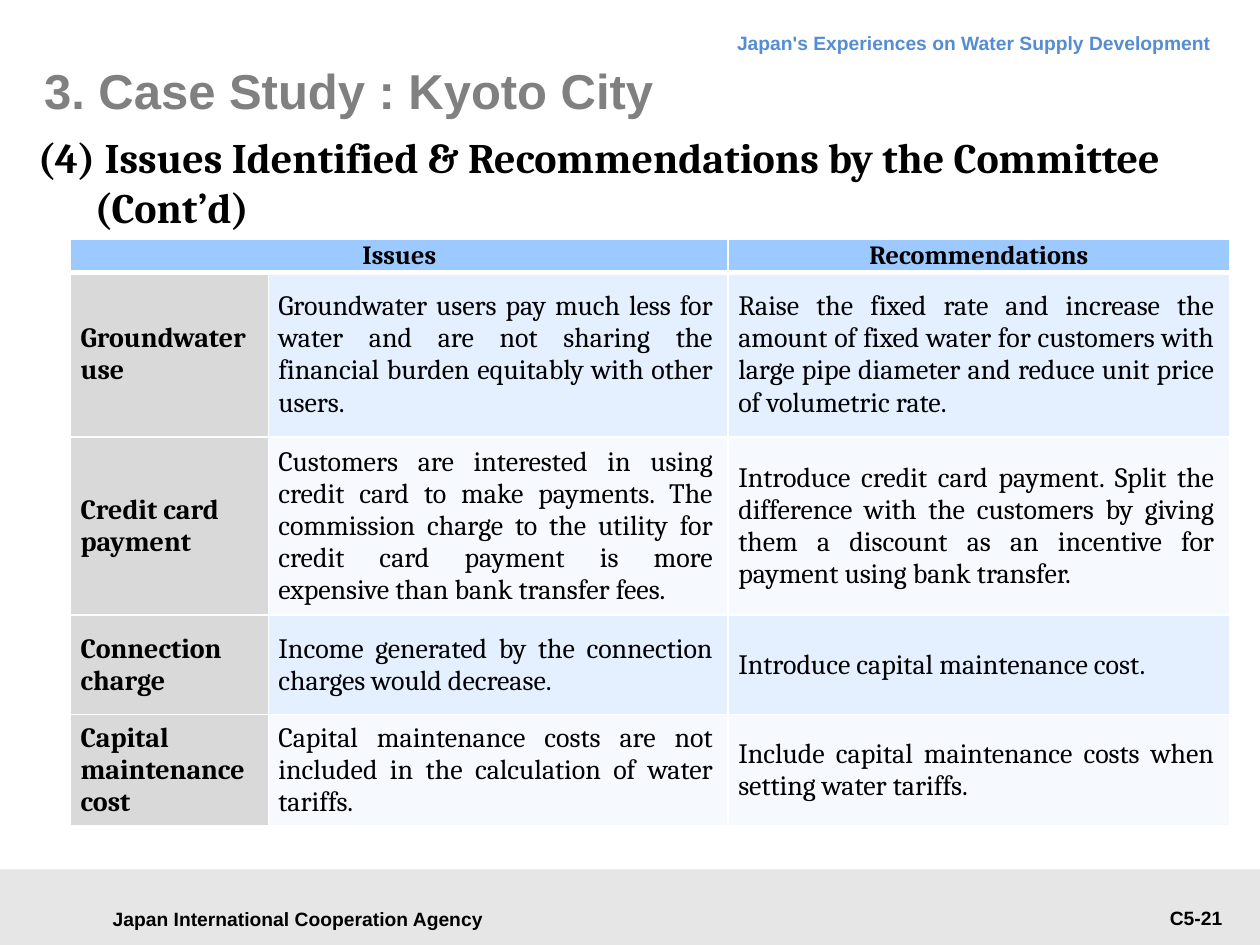
from dataclasses import dataclass

from lxml import etree
from pptx import Presentation
from pptx.dml.color import RGBColor
from pptx.enum import shapes, text
from pptx.oxml import ns
from pptx.util import Inches, Pt

ALIGN = text.PP_ALIGN


@dataclass(frozen=True)
class Theme:
    sans: str = "Arial"
    serif: str = "Cambria"
    ink: str = "000000"
    title: str = "808080"
    banner: str = "548DD4"
    footer: str = "E6E6E6"
    header: str = "9CC9FF"
    label: str = "D9D9D9"
    bands: tuple = ("CAE2FF", "EFF6FF")
    border: str = "FFFFFF"
    title_size: int = 28
    heading_size: int = 24
    cell_size: int = 16
    header_size: int = 15
    small_size: int = 11


T = Theme()

COLS = (1.57, 3.65, 3.98)
ROWS = (0.26, 1.31, 1.41, 0.79, 0.87)
ISSUES = (
    ("Groundwater use",
     "Groundwater users pay much less for water and are not sharing the "
     "financial burden equitably with other users.",
     "Raise the fixed rate and increase the amount of fixed water for customers "
     "with large pipe diameter and reduce unit price of volumetric rate."),
    ("Credit card payment",
     "Customers are interested in using credit card to make payments. The "
     "commission charge to the utility for credit card payment is more "
     "expensive than bank transfer fees.",
     "Introduce credit card payment. Split the difference with the customers by "
     "giving them a discount as an incentive for payment using bank transfer."),
    ("Connection charge",
     "Income generated by the connection charges would decrease.",
     "Introduce capital maintenance cost."),
    ("Capital maintenance cost",
     "Capital maintenance costs are not included in the calculation of water "
     "tariffs.",
     "Include capital maintenance costs when setting water tariffs."),
)


def write(p, words, size, font=T.sans, color=T.ink, bold=True, align=ALIGN.LEFT):
    """Put one formatted run into a paragraph."""
    p.alignment = align
    r = p.add_run()
    r.text = words
    r.font.name, r.font.size, r.font.bold = font, Pt(size), bold
    r.font.color.rgb = RGBColor.from_string(color)


def place(s, left, top, width, height):
    s.left, s.top = Inches(left), Inches(top)
    s.width, s.height = Inches(width), Inches(height)


def set_margins(obj, left, top, right, bottom):
    obj.margin_left, obj.margin_top = Inches(left), Inches(top)
    obj.margin_right, obj.margin_bottom = Inches(right), Inches(bottom)


def add_label(s, box, words, anchor=text.MSO_ANCHOR.TOP, spacing=None, **fmt):
    tf = s.shapes.add_textbox(*map(Inches, box)).text_frame
    tf.word_wrap = True
    tf.vertical_anchor = anchor
    p = tf.paragraphs[0]
    p.line_spacing = spacing
    write(p, words, T.small_size, **fmt)


def add_footer_band(s):
    sp = s.shapes.add_shape(shapes.MSO_SHAPE.RECTANGLE, Inches(0), Inches(6.9),
                            Inches(10), Inches(0.6))
    sp.shadow.inherit = False
    sp.fill.solid()
    sp.fill.fore_color.rgb = RGBColor.from_string(T.footer)
    sp.line.fill.background()


def fill_title(sp, words):
    place(sp, 0.35, 0.36, 9.37, 0.71)
    tf = sp.text_frame
    set_margins(tf, 0, 0, 0, 0)
    tf.vertical_anchor = text.MSO_ANCHOR.MIDDLE
    write(tf.paragraphs[0], words, T.title_size, color=T.title)


def fill_heading(sp, lines):
    """Unbulleted heading; lines are (words, left indent) pairs."""
    place(sp, 0.2, 0.99, 9.93, 0.91)
    tf = sp.text_frame
    for i, (words, indent) in enumerate(lines):
        p = tf.add_paragraph() if i else tf.paragraphs[0]
        pPr = p._p.get_or_add_pPr()
        pPr.set("marL", str(Inches(indent)))
        pPr.set("indent", "0")
        etree.SubElement(pPr, ns.qn("a:buNone"))
        p.space_before = Pt(0)
        write(p, words, T.heading_size, font=T.serif)


def set_borders(cell, bottom=1):
    tcPr = cell._tc.get_or_add_tcPr()
    widths = {"a:lnL": 1, "a:lnR": 1, "a:lnT": 1, "a:lnB": bottom}
    for i, (tag, width) in enumerate(widths.items()):
        ln = etree.Element(ns.qn(tag), w=str(Pt(width)))
        fill = etree.SubElement(ln, ns.qn("a:solidFill"))
        etree.SubElement(fill, ns.qn("a:srgbClr"), val=T.border)
        tcPr.insert(i, ln)


def set_cell(cell, words, fill, size=T.cell_size, margins=(0.08, 0.04, 0.12, 0.04),
             alpha=None, bottom=1, **fmt):
    cell.vertical_anchor = text.MSO_ANCHOR.MIDDLE
    set_margins(cell, *margins)
    cell.fill.solid()
    cell.fill.fore_color.rgb = RGBColor.from_string(fill)
    if alpha:
        clr = cell._tc.tcPr.find(".//" + ns.qn("a:srgbClr"))
        etree.SubElement(clr, ns.qn("a:alpha"), val=str(alpha * 1000))
    set_borders(cell, bottom)
    if words:
        write(cell.text_frame.paragraphs[0], words, size, font=T.serif, **fmt)


def add_issues_table(s):
    tbl = s.shapes.add_table(len(ROWS), len(COLS), Inches(0.56), Inches(1.9),
                             Inches(sum(COLS)), Inches(sum(ROWS))).table
    for col, width in zip(tbl.columns, COLS):
        col.width = Inches(width)
    for row, height in zip(tbl.rows, ROWS):
        row.height = Inches(height)

    # Header row, with "Issues" over the first two columns
    for c, words in enumerate(("Issues", "", "Recommendations")):
        set_cell(tbl.cell(0, c), words, T.header, size=T.header_size,
                 margins=(0.01, 0.01, 0.01, 0), bottom=3, align=ALIGN.CENTER)
    tbl.cell(0, 0).merge(tbl.cell(0, 1))

    # One row per issue, in alternating bands
    for i, (label, *details) in enumerate(ISSUES):
        top = 3 if i == 0 else 1
        set_cell(tbl.cell(i + 1, 0), label, T.label)
        for c, words in enumerate(details, 1):
            set_cell(tbl.cell(i + 1, c), words, T.bands[i % 2], alpha=50,
                     bold=False, align=ALIGN.JUSTIFY)
        for c in range(len(COLS)):
            ln = tbl.cell(i + 1, c)._tc.tcPr.find(ns.qn("a:lnT"))
            ln.set("w", str(Pt(top)))


def main():
    prs = Presentation()
    prs.slide_width, prs.slide_height = Inches(10), Inches(7.5)
    s = prs.slides.add_slide(prs.slide_layouts[1])

    # Footer and running header
    add_footer_band(s)
    add_label(s, (0.71, 7.12, 3.31, 0.34), "Japan International Cooperation Agency",
              anchor=text.MSO_ANCHOR.MIDDLE, align=ALIGN.CENTER)
    add_label(s, (2.72, 0.13, 6.99, 0.38),
              "Japan's Experiences on Water Supply Development",
              spacing=Pt(18), color=T.banner, align=ALIGN.RIGHT)
    add_label(s, (8.23, 7.14, 1.57, 0.29), "C5-21", align=ALIGN.RIGHT)

    # Title, heading and table
    fill_title(s.shapes.title, "3. Case Study : Kyoto City")
    fill_heading(s.placeholders[1], (
        ("(4) Issues Identified & Recommendations by the Committee", 0),
        ("(Cont’d)", 0.45)))
    add_issues_table(s)

    prs.save("out.pptx")


if __name__ == "__main__":
    main()
